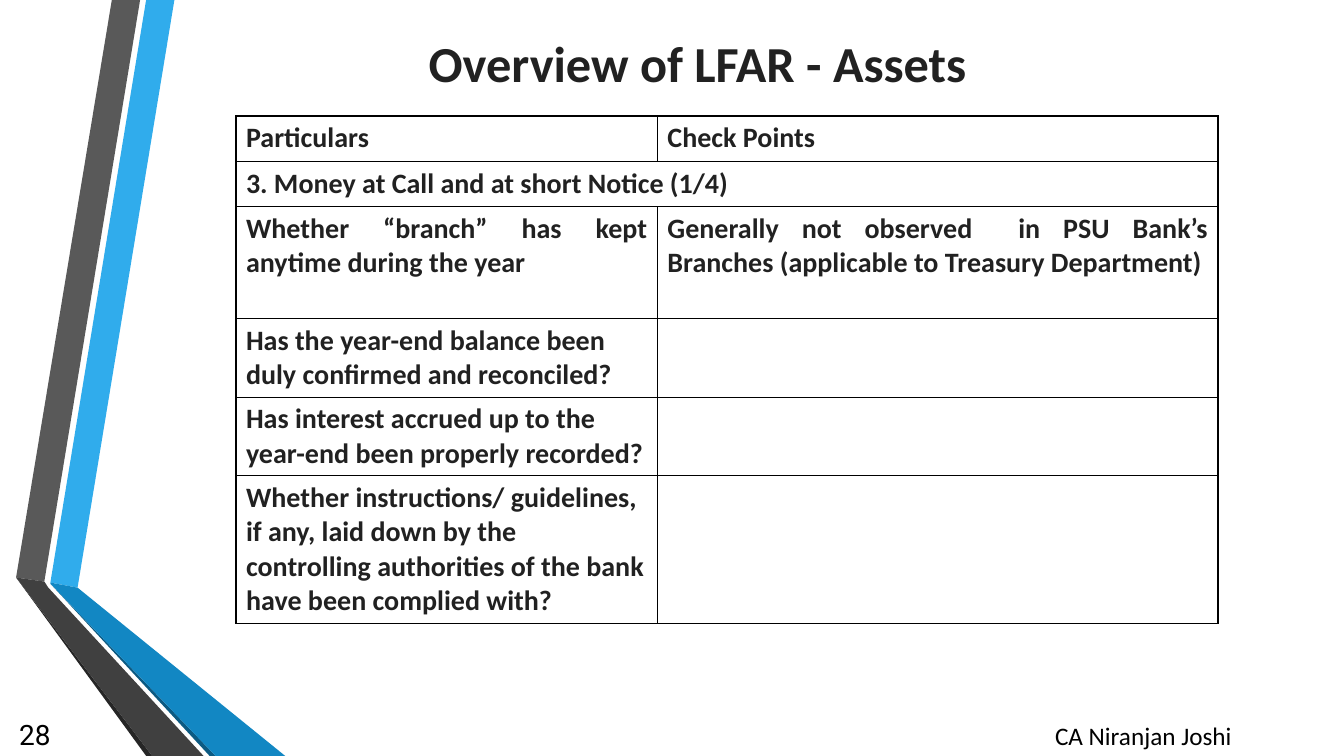
from lxml import etree
from pptx import Presentation, util as u
from pptx.dml.color import RGBColor
from pptx.enum import text
from pptx.oxml import ns

THEME = {
    "font": "Calibri", "number_font": "Roboto",
    "title_size": 36, "body_size": 20, "footer_size": 18,
    "ink": "212121", "black": "000000", "border_points": 1,
    "light_blue": "30ACEC", "blue": "1287C3", "deep_blue": "0C5A82",
    "grey": "595959", "dark_grey": "404040", "deep_grey": "262626",
}
LEFT, CENTER, RIGHT, JUSTIFY = (
    text.PP_ALIGN.LEFT, text.PP_ALIGN.CENTER, text.PP_ALIGN.RIGHT, text.PP_ALIGN.JUSTIFY)
TOP, MIDDLE = text.MSO_ANCHOR.TOP, text.MSO_ANCHOR.MIDDLE

RIBBONS = [
    ("light_blue", [(0.5, 5.78), (0.77, 5.83), (1.73, 0), (1.45, 0)]),
    ("grey", [(1.39, 0), (1.11, 0), (0.16, 5.73), (0.44, 5.77)]),
    ("deep_grey", [(0.16, 5.73), (1.45, 7.5), (1.51, 7.5)]),
    ("deep_blue", [(0.5, 5.79), (2.08, 7.5), (2.14, 7.5)]),
    ("blue", [(0.5, 5.78), (0.5, 5.79), (2.14, 7.5), (2.83, 7.5), (0.77, 5.83)]),
    ("dark_grey", [(2.02, 7.5), (0.48, 5.83), (0.44, 5.77), (0.16, 5.73), (1.51, 7.5)]),
]
LABELS = [
    ("Overview of LFAR - Assets", (2.42, 0.25, 9, 0.74), CENTER, MIDDLE,
     ("font", "title_size", "ink", True)),
    ("CA Niranjan Joshi", (9.59, 7.1, 3.5, 0.4), CENTER, TOP,
     ("font", "footer_size", "black", False)),
    ("28", (0, 7.08, 0.6, 0.4), RIGHT, MIDDLE,
     ("number_font", "body_size", "black", False)),
]
TABLE_CORNER = (2.34, 1.15)
COLUMN_WIDTHS = [4.18, 5.56]
CHECKLIST = [
    (0.45, LEFT, ["Particulars", "Check Points"]),
    (0.45, LEFT, ["3. Money at Call and at short Notice (1/4)"]),
    (1.11, JUSTIFY, ["Whether “branch” has kept anytime during the year",
                     "Generally not observed  in PSU Bank’s Branches "
                     "(applicable to Treasury Department)"]),
    (0.77, LEFT, ["Has the year-end balance been duly confirmed and reconciled?", ""]),
    (0.77, LEFT, ["Has interest accrued up to the year-end been properly recorded?", ""]),
    (1.46, LEFT, ["Whether instructions/ guidelines, if any, laid down by the controlling "
                  "authorities of the bank have been complied with?", ""]),
]


def color(name):
    return RGBColor.from_string(THEME[name])


def write(frame, content, align, style):
    font_name, size, ink, bold = style
    paragraph = frame.paragraphs[0]
    paragraph.alignment = align
    if content:
        run = paragraph.add_run()
        run.text = content
        run.font.name = THEME[font_name]
        run.font.size = u.Pt(THEME[size])
        run.font.bold = bold
        run.font.color.rgb = color(ink)


def add_ribbon(slide, fill, points):
    corners = [(u.Inches(x), u.Inches(y)) for x, y in points]
    builder = slide.shapes.build_freeform(*corners[0])
    builder.add_line_segments(corners[1:], close=True)
    shape = builder.convert_to_shape()
    shape.shadow.inherit = False
    shape.fill.solid()
    shape.fill.fore_color.rgb = color(fill)
    shape.line.fill.background()


def add_label(slide, content, box, align, anchor, style):
    frame = slide.shapes.add_textbox(*map(u.Inches, box)).text_frame
    frame.word_wrap = True
    frame.vertical_anchor = anchor
    write(frame, content, align, style)


def format_cell(cell):
    properties = cell._tc.get_or_add_tcPr()
    for side in ("a:lnL", "a:lnR", "a:lnT", "a:lnB"):
        line = etree.SubElement(properties, ns.qn(side), w=str(u.Pt(THEME["border_points"])))
        fill = etree.SubElement(line, ns.qn("a:solidFill"))
        etree.SubElement(fill, ns.qn("a:srgbClr"), val=THEME["black"])
    cell.fill.background()


def add_checklist(slide):
    heights = [height for height, _, _ in CHECKLIST]
    box = (*TABLE_CORNER, sum(COLUMN_WIDTHS), sum(heights))
    table = slide.shapes.add_table(
        len(CHECKLIST), len(COLUMN_WIDTHS), *map(u.Inches, box)).table
    table.first_row = table.horz_banding = False
    for column, width in zip(table.columns, COLUMN_WIDTHS):
        column.width = u.Inches(width)
    for index, (height, align, entries) in enumerate(CHECKLIST):
        table.rows[index].height = u.Inches(height)
        for cell in table.rows[index].cells:
            format_cell(cell)
        if len(entries) == 1:
            table.cell(index, 0).merge(table.cell(index, len(COLUMN_WIDTHS) - 1))
        for position, entry in enumerate(entries):
            write(table.cell(index, position).text_frame, entry, align,
                  ("font", "body_size", "ink", True))


def main():
    presentation = Presentation()
    presentation.slide_width = u.Inches(13.33)
    presentation.slide_height = u.Inches(7.5)
    slide = presentation.slides.add_slide(presentation.slide_layouts[6])
    for ribbon in RIBBONS:
        add_ribbon(slide, *ribbon)
    add_checklist(slide)
    for label in LABELS:
        add_label(slide, *label)
    presentation.save("out.pptx")


if __name__ == "__main__":
    main()
